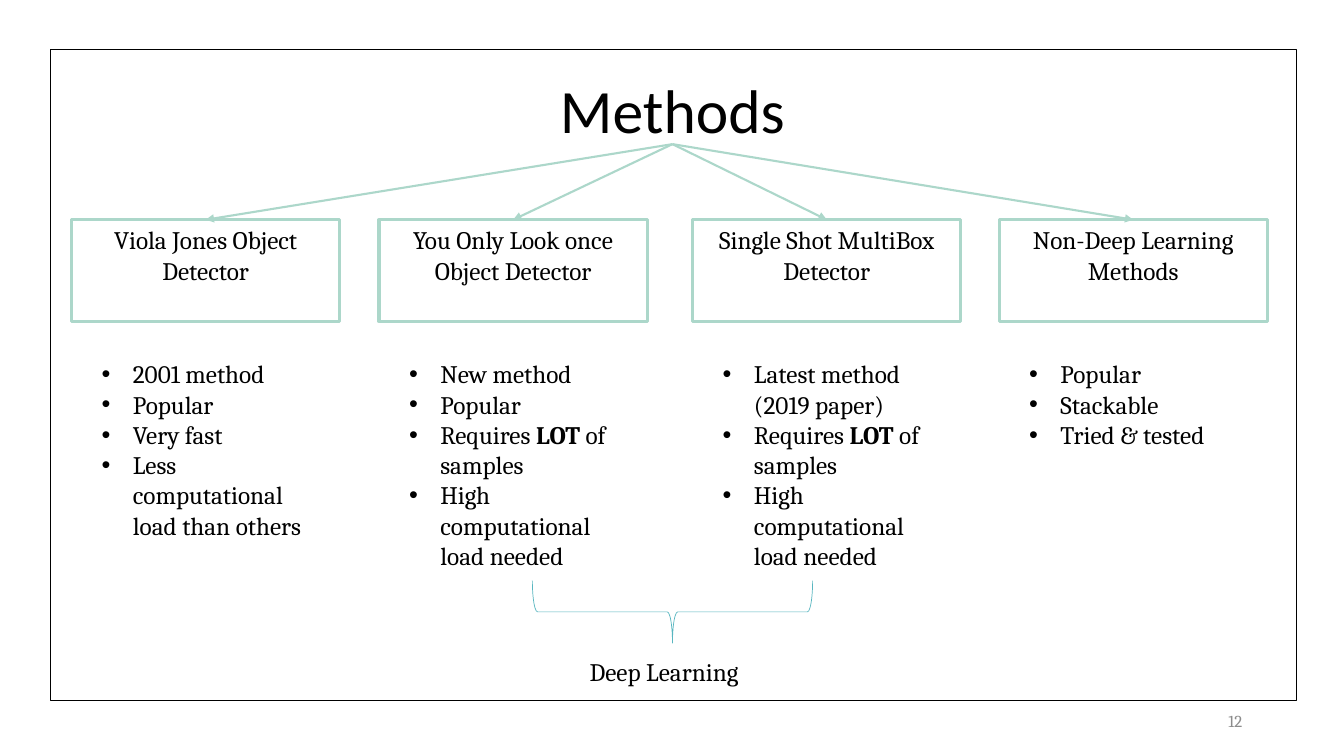
import pptx
import pptx.dml.color
import pptx.enum.shapes
import pptx.enum.text
import pptx.oxml
import pptx.oxml.ns
import pptx.util

PX = 9144  # 100 px to the inch
BLACK, GREY, MINT, TEAL = "000000", "8C8C8C", "ACD7CA", "58B6C0"
SHAPE = pptx.enum.shapes.MSO_SHAPE
ALIGN = pptx.enum.text.PP_ALIGN
ANCHOR = pptx.enum.text.MSO_ANCHOR
FAN_TOP = (667, 143)
BOX_TOP, BOX_WIDTH, BOX_HEIGHT = 218, 266, 101
LIST_TOP, LIST_WIDTH = 351, 226

# Column centre, heading, list height, points; asterisks enclose bold words.
METHODS = [
    (204, "Viola Jones Object Detector", 192,
     ["2001 method", "Popular", "Very fast", "Less computational load than others"]),
    (509, "You Only Look once Object Detector", 222,
     ["New method", "Popular", "Requires *LOT* of samples", "High computational load needed"]),
    (820, "Single Shot MultiBox Detector", 222,
     ["Latest method (2019 paper)", "Requires *LOT* of samples", "High computational load needed"]),
    (1124, "Non-Deep Learning Methods", 101,
     ["Popular", "Stackable", "Tried & tested"]),
]


def px(*lengths):
    return [pptx.util.Emu(length * PX) for length in lengths]


def color(value):
    return pptx.dml.color.RGBColor.from_string(value)


def write(shape, lines, size=18, font="Cambria", ink=BLACK, align=ALIGN.LEFT,
          anchor=ANCHOR.TOP, spacing=None, bullet=False):
    """Fill a shape with one paragraph per line; asterisks enclose bold words."""
    frame = shape.text_frame
    frame.word_wrap = True
    frame.vertical_anchor = anchor
    for index, line in enumerate(lines):
        para = frame.add_paragraph() if index else frame.paragraphs[0]
        para.alignment = align
        para.line_spacing = spacing
        if bullet:
            add_bullet(para)
        for part, words in enumerate(line.split("*")):
            span = para.add_run()
            span.text = words
            span.font.size = pptx.util.Pt(size)
            span.font.name = font
            span.font.bold = part % 2 == 1
            span.font.color.rgb = color(ink)


def add_bullet(para):
    indent = 31 * PX
    props = para._p.get_or_add_pPr()
    props.set("marL", str(indent))
    props.set("indent", str(-indent))
    namespace = pptx.oxml.ns.nsdecls("a")
    props.append(pptx.oxml.parse_xml(f'<a:buFont {namespace} typeface="Arial"/>'))
    props.append(pptx.oxml.parse_xml(f'<a:buChar {namespace} char="•"/>'))


def add_text(page, box, lines, **style):
    write(page.shapes.add_textbox(*px(*box)), lines, **style)


def add_outline(page, kind, box, line, weight):
    shape = page.shapes.add_shape(kind, *px(*box))
    shape.shadow.inherit = False
    shape.fill.background()
    shape.line.color.rgb = color(line)
    shape.line.width = pptx.util.Pt(weight)
    return shape


def add_arrow(page, start, end):
    arrow = page.shapes.add_connector(
        pptx.enum.shapes.MSO_CONNECTOR.STRAIGHT, *px(*start, *end))
    arrow.line.color.rgb = color(MINT)
    arrow.line.width = pptx.util.Pt(1.5)
    namespace = pptx.oxml.ns.nsdecls("a")
    arrow.line._get_or_add_ln().append(
        pptx.oxml.parse_xml(f'<a:tailEnd {namespace} type="triangle"/>'))
    arrow._element.spPr.append(pptx.oxml.parse_xml(f"<a:effectLst {namespace}/>"))


def add_title(page, box, text):
    title = page.shapes.title
    title.left, title.top, title.width, title.height = px(*box)
    write(title, [text], size=44, font="Calibri", align=ALIGN.CENTER,
          anchor=ANCHOR.MIDDLE, spacing=0.9)


def add_method(page, center, heading, list_height, points):
    """Place a heading box, its list and the arrow to it around one centre."""
    box = (center - BOX_WIDTH // 2, BOX_TOP, BOX_WIDTH, BOX_HEIGHT)
    write(add_outline(page, SHAPE.RECTANGLE, box, MINT, 2.25), [heading], align=ALIGN.CENTER)
    add_text(page, (center - LIST_WIDTH // 2, LIST_TOP, LIST_WIDTH, list_height),
             points, bullet=True)
    add_arrow(page, FAN_TOP, (center, BOX_TOP))


def add_group_label(page, box, text):
    """Place a downward brace in the top of the box and its label below."""
    left, top, width, height = box
    depth, label_height, label_width = 62, 40, 186
    # The brace is laid out upright, then turned about its centre.
    upright = (left + (width - depth) // 2, top + (depth - width) // 2, depth, width)
    add_outline(page, SHAPE.LEFT_BRACE, upright, TEAL, 0.5).rotation = 270
    add_text(page, (left + 47, top + height - label_height, label_width, label_height), [text])


def build_methods_page(deck):
    page = deck.slides.add_slide(deck.slide_layouts[5])
    add_title(page, (92, 40, 1150, 145), "Methods")
    add_text(page, (942, 695, 300, 40), ["12"], size=12, ink=GREY,
             align=ALIGN.RIGHT, anchor=ANCHOR.MIDDLE)
    add_outline(page, SHAPE.RECTANGLE, (50, 49, 1236, 646), BLACK, 0.75)
    for method in METHODS:
        add_method(page, *method)
    add_group_label(page, (528, 576, 278, 110), "Deep Learning")


def main():
    deck = pptx.Presentation()
    deck.slide_width, deck.slide_height = px(1333, 750)
    build_methods_page(deck)
    deck.save("out.pptx")


if __name__ == "__main__":
    main()
